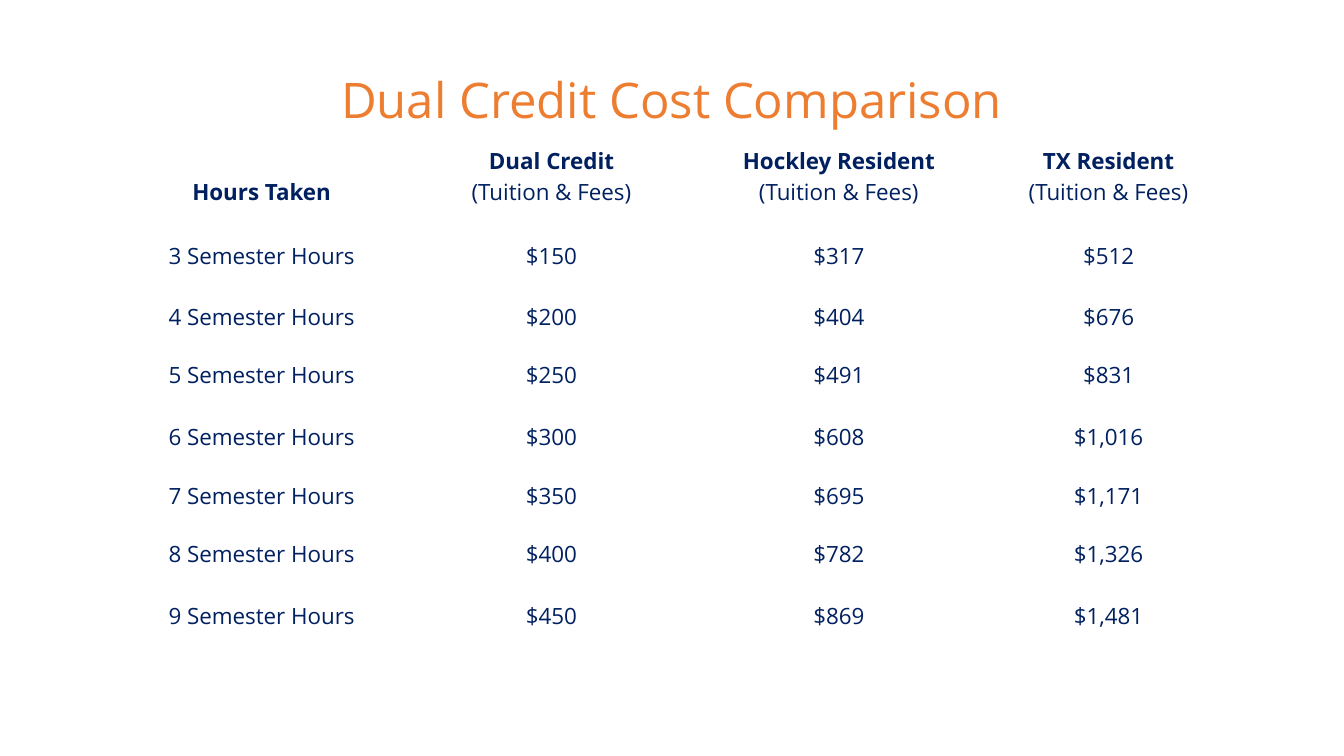
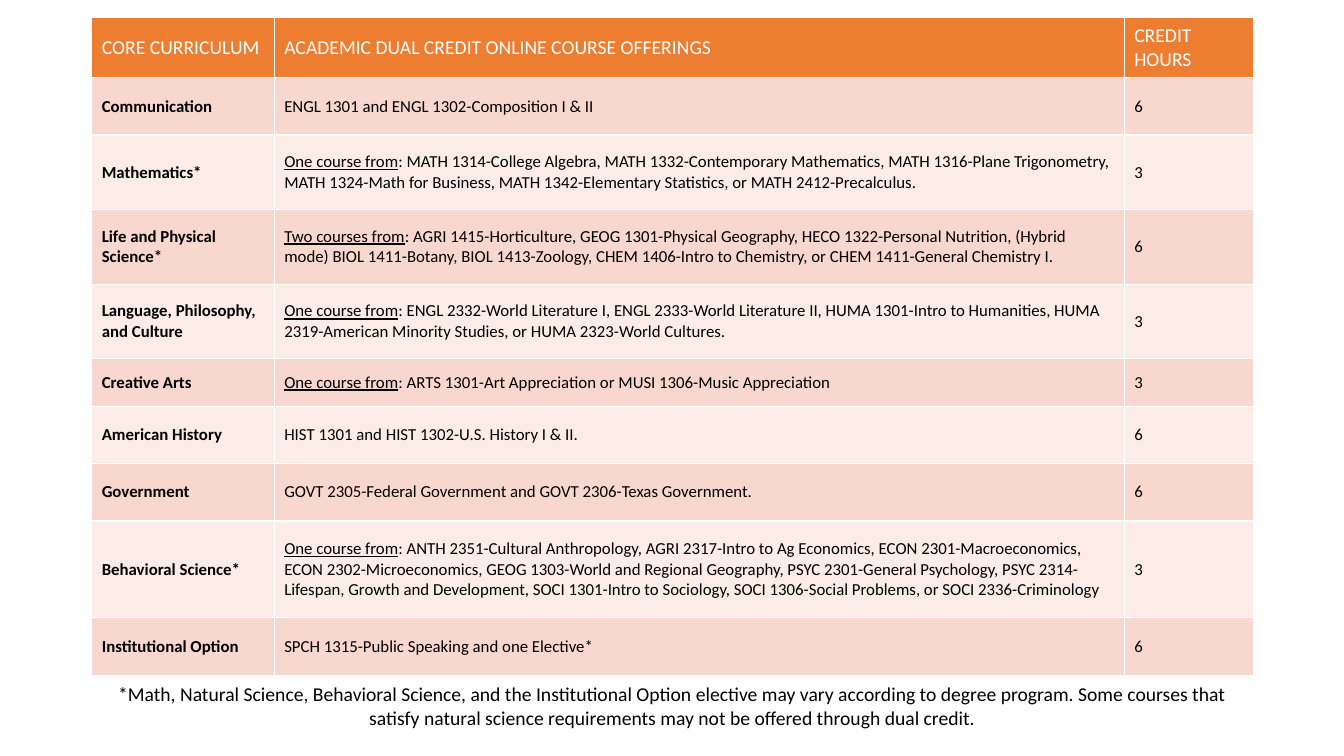
"""Build a two-slide deck on dual credit costs and course offerings."""
from dataclasses import dataclass

from lxml import etree
from pptx import Presentation
from pptx.dml.color import RGBColor
from pptx.enum import text as t
from pptx.oxml import ns
from pptx.util import Inches, Pt


@dataclass(frozen=True)
class Theme:
    """Colours, fonts and type sizes used across the deck."""
    orange: str = "ED7D31"
    navy: str = "002060"
    white: str = "FFFFFF"
    black: str = "000000"
    bands: tuple = ("F8D7CE", "FCECE8")
    cost_font: str = "Open Sans"
    course_font: str = "Calibri"
    title_size: int = 35
    cost_size: int = 16
    label_size: int = 14
    course_size: int = 12
    border: int = 1


THEME = Theme()
PLAIN, BOLD, UNDERLINE = "plain", "bold", "underline"

COST_TITLE = "Dual Credit Cost Comparison"
FEES = "(Tuition & Fees)"
COST_HEADS = [("Hours Taken",), ("Dual Credit", FEES), ("Hockley Resident", FEES), ("TX Resident", FEES)]
COSTS = [
    (3, 150, 317, 512),
    (4, 200, 404, 676),
    (5, 250, 491, 831),
    (6, 300, 608, 1016),
    (7, 350, 695, 1171),
    (8, 400, 782, 1326),
    (9, 450, 869, 1481),
]
COST_COLUMNS = [2.95, 2.8, 2.9, 2.45]
COST_ROWS = [0.71, 0.64, 0.6, 0.58, 0.62, 0.58, 0.58, 0.61]

COURSE_HEADS = ["CORE CURRICULUM", "ACADEMIC DUAL CREDIT ONLINE COURSE OFFERINGS", "CREDIT HOURS"]
ONE, TWO = "One course from", "Two courses from"
COURSES = [
    ("Communication", "", "ENGL 1301 and ENGL 1302-Composition I & II", 6),
    ("Mathematics*", ONE,
     ": MATH 1314-College Algebra, MATH 1332-Contemporary Mathematics, MATH 1316-Plane Trigonometry, "
     "MATH 1324-Math for Business, MATH 1342-Elementary Statistics, or MATH 2412-Precalculus.", 3),
    ("Life and Physical Science*", TWO,
     ": AGRI 1415-Horticulture, GEOG 1301-Physical Geography, HECO 1322-Personal Nutrition, (Hybrid mode) "
     "BIOL 1411-Botany, BIOL 1413-Zoology, CHEM 1406-Intro to Chemistry, or CHEM 1411-General Chemistry I.", 6),
    ("Language, Philosophy, and Culture", ONE,
     ": ENGL 2332-World Literature I, ENGL 2333-World Literature II, HUMA 1301-Intro to Humanities, "
     "HUMA 2319-American Minority Studies, or HUMA 2323-World Cultures.", 3),
    ("Creative Arts", ONE, ": ARTS 1301-Art Appreciation or MUSI 1306-Music Appreciation", 3),
    ("American History", "", "HIST 1301 and HIST 1302-U.S. History I & II.", 6),
    ("Government", "", "GOVT 2305-Federal Government and GOVT 2306-Texas Government.", 6),
    ("Behavioral Science*", ONE,
     ": ANTH 2351-Cultural Anthropology, AGRI 2317-Intro to Ag Economics, ECON 2301-Macroeconomics, "
     "ECON 2302-Microeconomics, GEOG 1303-World and Regional Geography, PSYC 2301-General Psychology, "
     "PSYC 2314-Lifespan, Growth and Development, SOCI 1301-Intro to Sociology, SOCI 1306-Social Problems, "
     "or SOCI 2336-Criminology", 3),
    ("Institutional Option", "", "SPCH 1315-Public Speaking and one Elective*", 6),
]
COURSE_COLUMNS = [1.81, 8.43, 1.28]
COURSE_ROWS = [0.6, 0.57, 0.74, 0.74, 0.74, 0.47, 0.57, 0.57, 0.96, 0.57]
FOOTNOTE = (
    "*Math, Natural Science, Behavioral Science, and the Institutional Option elective may vary according to "
    "degree program. Some courses that satisfy natural science requirements may not be offered through dual credit."
)


def write(frame, paragraphs, font, size, colour, align):
    """Fill a text frame with paragraphs, each a list of (text, style) runs."""
    for index, runs in enumerate(paragraphs):
        para = frame.paragraphs[0] if index == 0 else frame.add_paragraph()
        para.alignment = align
        for words, style in runs:
            span = para.add_run()
            span.text = words
            span.font.name = font
            span.font.size = Pt(size)
            span.font.bold = style == BOLD
            span.font.underline = style == UNDERLINE
            span.font.color.rgb = RGBColor.from_string(colour)


def add_grid(page, left, top, columns, rows):
    """Add an unbanded table with the given column widths and row heights."""
    frame = page.shapes.add_table(len(rows), len(columns), Inches(left), Inches(top),
                                  Inches(sum(columns)), Inches(sum(rows)))
    table = frame.table
    table.first_row = table.horz_banding = False
    for column, width in zip(table.columns, columns):
        column.width = Inches(width)
    for row, height in zip(table.rows, rows):
        row.height = Inches(height)
    return table


def set_borders(cell, colour, width):
    """Draw a solid line on all four sides of a cell."""
    properties = cell._tc.get_or_add_tcPr()
    for index, side in enumerate(("lnL", "lnR", "lnT", "lnB")):
        line = etree.Element(ns.qn(f"a:{side}"), w=str(Pt(width)))
        fill = etree.SubElement(line, ns.qn("a:solidFill"))
        etree.SubElement(fill, ns.qn("a:srgbClr"), val=colour)
        properties.insert(index, line)


def build_costs(deck):
    """Add the cost comparison slide."""
    page = deck.slides.add_slide(deck.slide_layouts[5])
    title = page.shapes.title
    title.left, title.top, title.width, title.height = map(Inches, (2.25, 0.7, 8.83, 0.64))
    title.text_frame.vertical_anchor = t.MSO_ANCHOR.MIDDLE
    write(title.text_frame, [[(COST_TITLE, PLAIN)]], THEME.cost_font, THEME.title_size,
          THEME.orange, t.PP_ALIGN.CENTER)
    title.text_frame.paragraphs[0].line_spacing = 0.9

    heads = [[[(words, PLAIN if words == FEES else BOLD)] for words in head] for head in COST_HEADS]
    body = [[[[(f"{hours} Semester Hours", PLAIN)]]] + [[[(f"${price:,}", PLAIN)]] for price in prices]
            for hours, *prices in COSTS]
    table = add_grid(page, 1.12, 1.34, COST_COLUMNS, COST_ROWS)
    for row, contents in zip(table.rows, [heads] + body):
        for cell, paragraphs in zip(row.cells, contents):
            cell.fill.background()
            cell.vertical_anchor = t.MSO_ANCHOR.BOTTOM
            cell.margin_left = cell.margin_right = cell.margin_top = Inches(0.01)
            cell.margin_bottom = 0
            write(cell.text_frame, paragraphs, THEME.cost_font, THEME.cost_size,
                  THEME.navy, t.PP_ALIGN.CENTER)


def build_courses(deck):
    """Add the course offerings slide."""
    page = deck.slides.add_slide(deck.slide_layouts[6])
    heads = [[(words, PLAIN)] for words in COURSE_HEADS]
    body = []
    for area, lead, offer, hours in COURSES:
        lead_runs = [(lead, UNDERLINE)] if lead else []
        body.append([[(area, BOLD)], lead_runs + [(offer, PLAIN)], [(str(hours), PLAIN)]])

    table = add_grid(page, 0.91, 0.17, COURSE_COLUMNS, COURSE_ROWS)
    for index, (row, contents) in enumerate(zip(table.rows, [heads] + body)):
        if index == 0:
            fill, colour, size = THEME.orange, THEME.white, THEME.label_size
        else:
            fill, colour, size = THEME.bands[(index - 1) % 2], THEME.black, THEME.course_size
        for cell, runs in zip(row.cells, contents):
            cell.fill.solid()
            cell.fill.fore_color.rgb = RGBColor.from_string(fill)
            set_borders(cell, THEME.white, THEME.border)
            cell.vertical_anchor = t.MSO_ANCHOR.MIDDLE
            write(cell.text_frame, [runs], THEME.course_font, size, colour, t.PP_ALIGN.LEFT)

    note = page.shapes.add_textbox(*map(Inches, (0.91, 6.72, 11.52, 0.57)))
    note.text_frame.word_wrap = True
    note.text_frame.auto_size = t.MSO_AUTO_SIZE.SHAPE_TO_FIT_TEXT
    write(note.text_frame, [[(FOOTNOTE, PLAIN)]], THEME.course_font, THEME.label_size,
          THEME.black, t.PP_ALIGN.CENTER)


def main():
    """Build and save the deck."""
    deck = Presentation()
    deck.slide_width, deck.slide_height = Inches(13.33), Inches(7.5)
    build_costs(deck)
    build_courses(deck)
    deck.save("out.pptx")


if __name__ == "__main__":
    main()
